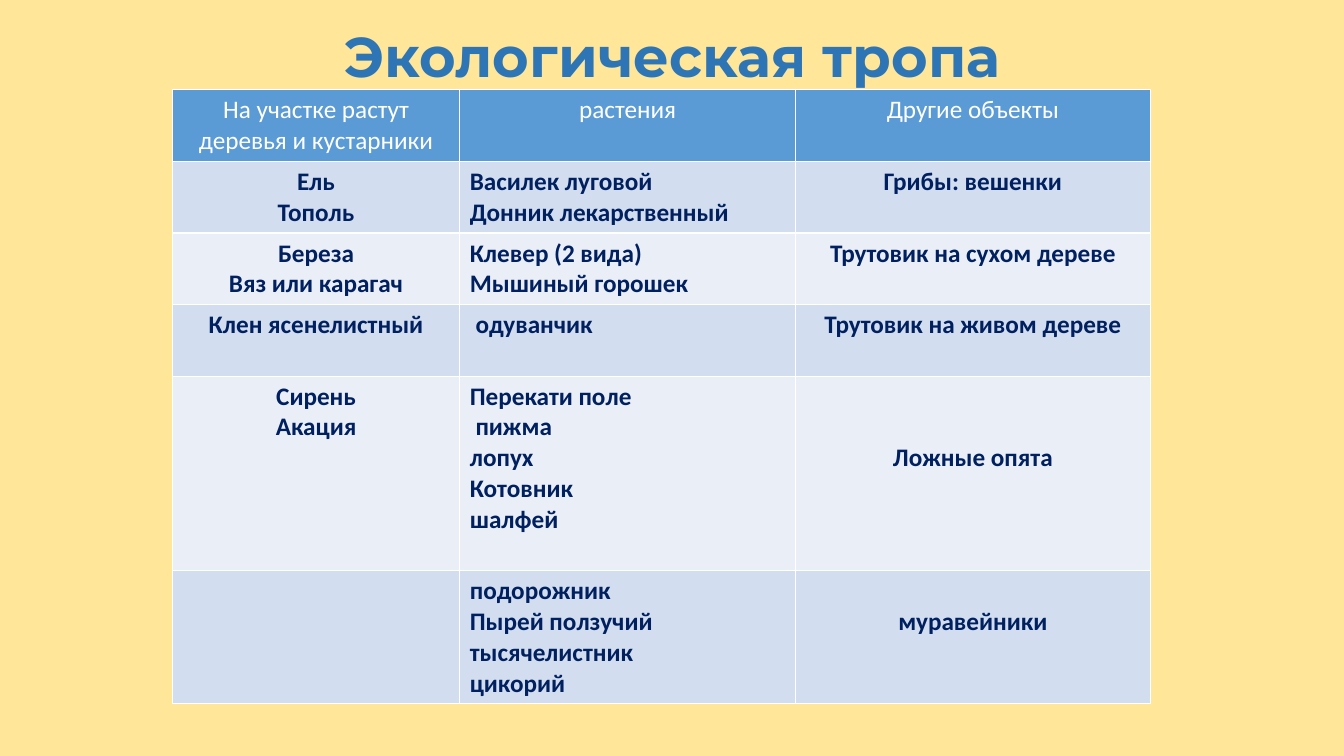
from dataclasses import dataclass

from pptx import Presentation
from pptx import util as u
from pptx.dml.color import RGBColor
from pptx.enum import text


@dataclass(frozen=True)
class Theme:
    background: str = "FFE699"
    heading: str = "2E75B6"
    header_fill: str = "5B9BD5"
    header_text: str = "FFFFFF"
    body_text: str = "002060"
    bands: tuple = ("D2DEEF", "EAEFF7")
    heading_font: str = "Montserrat"
    body_font: str = "Calibri"
    heading_size: int = 40
    body_size: int = 18


theme = Theme()
CENTER = text.PP_ALIGN.CENTER
JUSTIFY = text.PP_ALIGN.JUSTIFY


def write(frame, lines, font=theme.body_font, size=theme.body_size,
          color=theme.body_text, bold=True, align=CENTER, spacing=1.0):
    for index, line in enumerate(lines):
        paragraph = frame.add_paragraph() if index else frame.paragraphs[0]
        paragraph.alignment = align
        paragraph.line_spacing = spacing
        run = paragraph.add_run()
        run.text = line
        run.font.name = font
        run.font.size = u.Pt(size)
        run.font.bold = bold
        run.font.color.rgb = RGBColor.from_string(color)


prs = Presentation()
prs.slide_width = u.Inches(13.33)
prs.slide_height = u.Inches(7.5)
slide = prs.slides.add_slide(prs.slide_layouts[5])
slide.background.fill.solid()
slide.background.fill.fore_color.rgb = RGBColor.from_string(theme.background)

heading = slide.shapes.title
heading.left, heading.top = u.Inches(0.92), u.Inches(0.26)
heading.width, heading.height = u.Inches(11.5), u.Inches(1.27)
heading.text_frame.auto_size = text.MSO_AUTO_SIZE.NONE
heading.text_frame.vertical_anchor = text.MSO_ANCHOR.TOP
heading.text_frame.margin_top = u.Inches(0.03)
write(heading.text_frame, ["Экологическая тропа"], font=theme.heading_font,
      size=theme.heading_size, color=theme.heading, spacing=0.9)

headers = ["На участке растут деревья и кустарники", "растения", "Другие объекты"]
trail = [
    (["Ель", "Тополь"],
     ["Василек луговой", "Донник лекарственный"],
     ["Грибы: вешенки"]),
    (["Береза", "Вяз или карагач"],
     ["Клевер (2 вида)", "Мышиный горошек"],
     ["Трутовик на сухом дереве"]),
    (["Клен ясенелистный"], [" одуванчик"], ["Трутовик на живом дереве"]),
    (["Сирень", "Акация"],
     ["Перекати поле", " пижма", "лопух", "Котовник", "шалфей"],
     ["Ложные опята"]),
    ([],
     ["подорожник", "Пырей ползучий", "тысячелистник", "цикорий"],
     ["муравейники"]),
]
column_widths = [2.85, 3.33, 3.52]
row_heights = [0.71, 0.71, 0.71, 0.71, 1.93, 1.32]
top_offsets = {(4, 2): 0.61, (5, 2): 0.31}

table = slide.shapes.add_table(
    len(row_heights), len(column_widths), u.Inches(1.71), u.Inches(0.89),
    u.Inches(sum(column_widths)), u.Inches(sum(row_heights))).table
for column, width in zip(table.columns, column_widths):
    column.width = u.Inches(width)
for row, height in zip(table.rows, row_heights):
    row.height = u.Inches(height)

for col, label in enumerate(headers):
    cell = table.cell(0, col)
    cell.fill.solid()
    cell.fill.fore_color.rgb = RGBColor.from_string(theme.header_fill)
    write(cell.text_frame, [label], color=theme.header_text, bold=False)

for row, objects in enumerate(trail, start=1):
    for col, names in enumerate(objects):
        cell = table.cell(row, col)
        cell.fill.solid()
        cell.fill.fore_color.rgb = RGBColor.from_string(theme.bands[(row - 1) % 2])
        cell.margin_top = u.Inches(0.05 + top_offsets.get((row, col), 0))
        write(cell.text_frame, names, align=JUSTIFY if col == 1 else CENTER)

prs.save("out.pptx")
